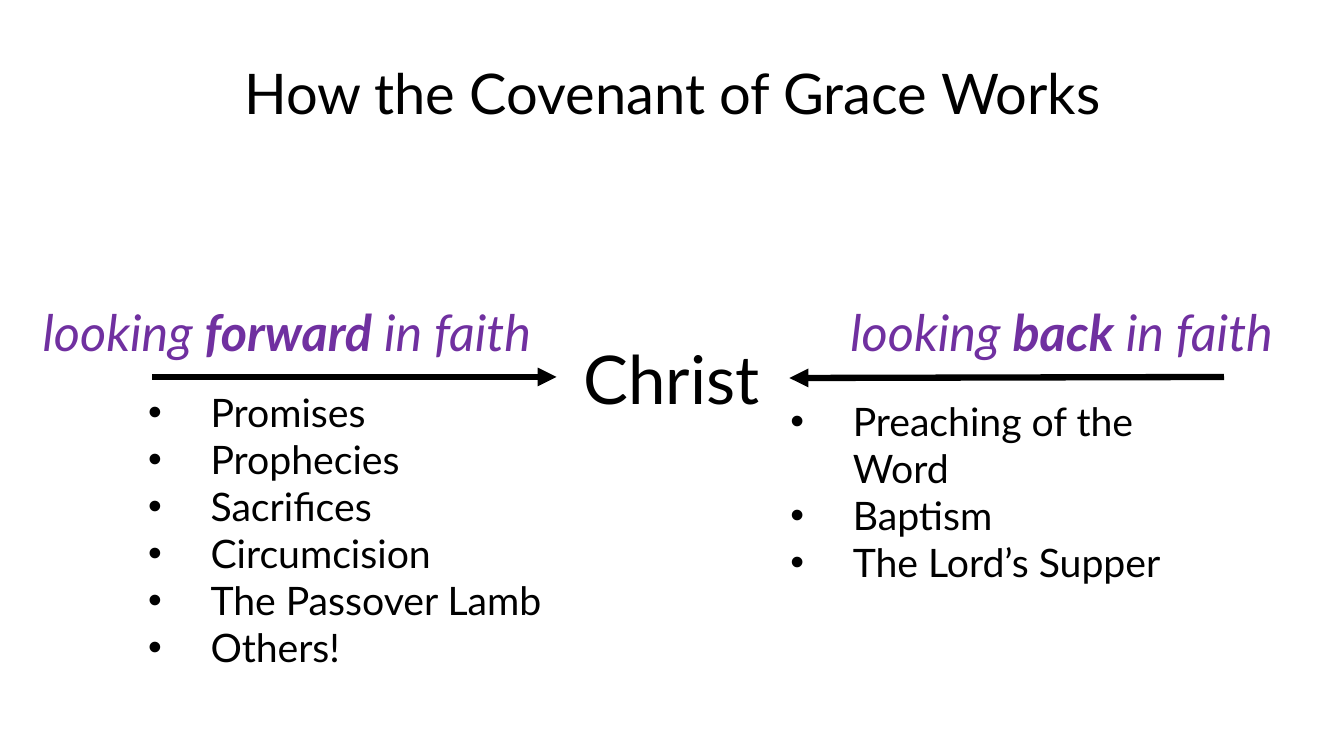
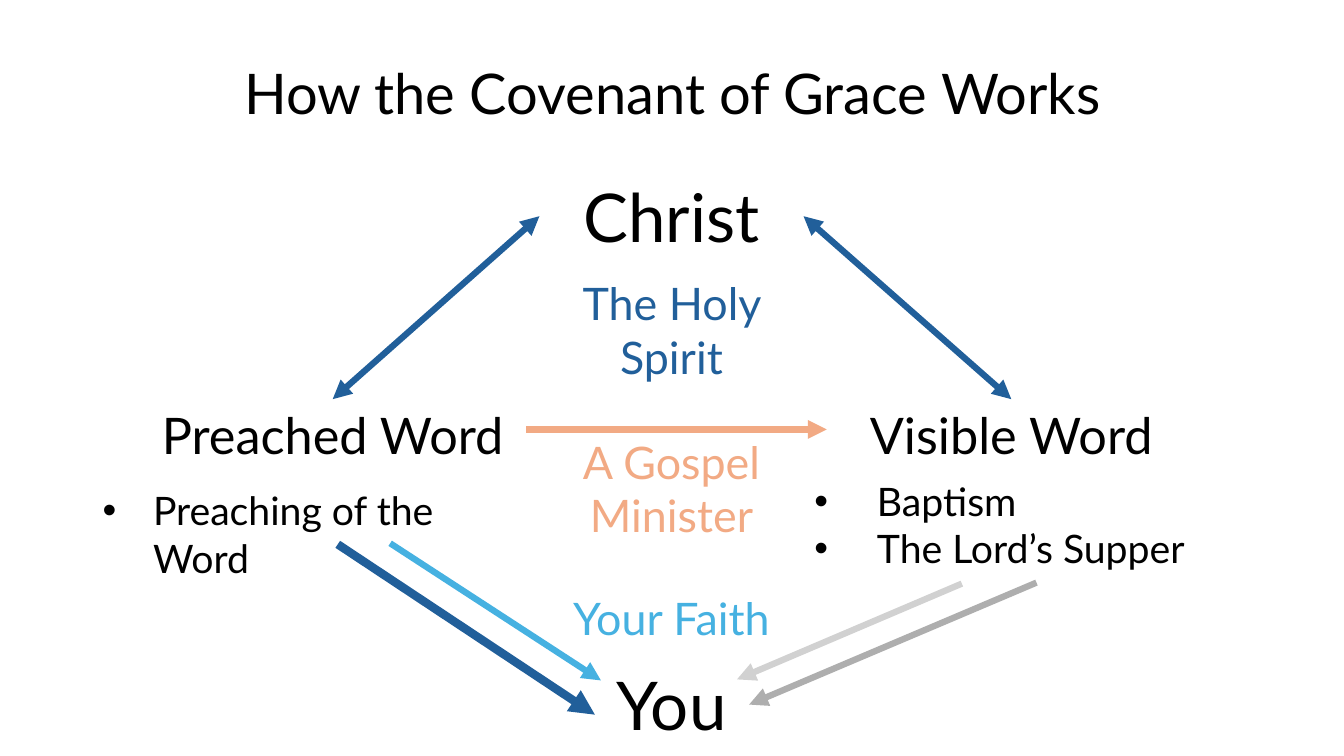
"""Build two slides on how the Covenant of Grace works."""
from lxml import etree
from pptx import Presentation
from pptx.dml.color import RGBColor
from pptx.enum import shapes, text
from pptx.oxml import ns
from pptx.util import Inches, Pt

FONT = "Lato"
TITLE = "How the Covenant of Grace Works"
COLORS = {
    "black": "000000", "purple": "7030A0", "navy": "215F9A", "sky": "46B1E1",
    "peach": "F2AA84", "gray": "AEAEAE", "silver": "D1D1D1",
}
CENTER_LEFT, CENTER_WIDTH = 5.35, 2.62
LABEL_WIDTH, LABEL_HEIGHT = 4.76, 0.71

DIRECTIONS = [
    ("forward", (0.09, 2.94, 5.51, LABEL_HEIGHT)),
    ("back", (8.15, 2.94, LABEL_WIDTH, LABEL_HEIGHT)),
]
OLD_SIGNS = ["Promises", "Prophecies", "Sacrifices", "Circumcision",
             "The Passover Lamb", "Others!"]
PREACHING = ["Preaching of the Word"]
SACRAMENTS = ["Baptism", "The Lord’s Supper"]
TIMELINE_ARROWS = [
    ((1.51, 3.74), (5.52, 3.74), "black", 4.5),
    ((12.14, 3.74), (7.83, 3.75), "black", 4.5),
]
MEANS = [
    ("The Holy Spirit", 2.69, 1.18, "navy"),
    ("A Gospel Minister", 4.26, 1.18, "peach"),
    ("Your Faith", 5.81, 0.64, "sky"),
]
MEANS_ARROWS = [
    ((5.22, 4.26), (8.2, 4.26), "peach", 4.5),
    ((3.35, 5.4), (5.9, 7.09), "navy", 6),
    ((10.28, 5.78), (7.43, 6.99), "gray", 4.5),
    ((3.87, 5.39), (5.96, 6.75), "sky", 4.5),
    ((9.54, 5.79), (7.31, 6.74), "silver", 4.5),
]


def add_paragraphs(slide, box, size, paragraphs, color="black"):
    """Add a text box; each paragraph is a list of (words, bold) runs."""
    label = slide.shapes.add_textbox(*map(Inches, box))
    frame = label.text_frame
    frame.word_wrap = True
    frame.auto_size = text.MSO_AUTO_SIZE.NONE
    for index, runs in enumerate(paragraphs):
        paragraph = frame.add_paragraph() if index else frame.paragraphs[0]
        paragraph.font.name = FONT
        paragraph.font.size = Pt(size)
        paragraph.font.color.rgb = RGBColor.from_string(COLORS[color])
        for words, bold in runs:
            run = paragraph.add_run()
            run.text = words
            if bold:
                run.font.bold = True
    return label


def add_label(slide, box, size, runs, color="black", italic=False):
    """Add one centred line of text."""
    label = add_paragraphs(slide, box, size, [runs], color)
    paragraph = label.text_frame.paragraphs[0]
    paragraph.alignment = text.PP_ALIGN.CENTER
    if italic:
        paragraph.font.italic = True
    return label


def add_bullets(slide, box, items, indent=0.62):
    """Add a bulleted list with a hanging indent."""
    listing = add_paragraphs(slide, box, 28, [[(item, False)] for item in items])
    for paragraph in listing.text_frame.paragraphs:
        properties = paragraph._p.get_or_add_pPr()
        properties.set("marL", str(Inches(indent)))
        properties.set("indent", str(-Inches(indent)))
        bullet_font = etree.Element(ns.qn("a:buFont"), typeface="Arial")
        bullet = etree.Element(ns.qn("a:buChar"), char="•")
        properties.insert(0, bullet_font)
        properties.insert(1, bullet)


def add_arrow(slide, start, end, color, width, double=False):
    """Add a straight arrow, with a second head at its start if double."""
    arrow = slide.shapes.add_connector(
        shapes.MSO_CONNECTOR.STRAIGHT, *map(Inches, (*start, *end)))
    arrow.line.color.rgb = RGBColor.from_string(COLORS[color])
    arrow.line.width = Pt(width)
    line = arrow.line._get_or_add_ln()
    for tip in (["headEnd"] if double else []) + ["tailEnd"]:
        etree.SubElement(line, ns.qn(f"a:{tip}"), type="triangle")
    etree.SubElement(arrow._element.spPr, ns.qn("a:effectLst"))
    return arrow


def add_center(slide, words, top, height, size=48, color="black"):
    """Add a label in the middle column."""
    box = (CENTER_LEFT, top, CENTER_WIDTH, height)
    return add_label(slide, box, size, [(words, False)], color)


def add_titled_slide(deck):
    """Add a blank slide with the shared title."""
    slide = deck.slides.add_slide(deck.slide_layouts[6])
    add_label(slide, (0.6, 0.53, 12.14, 0.77), 40, [(TITLE, False)])
    return slide


def build_timeline(deck):
    """Show faith looking forward and back to Christ."""
    slide = add_titled_slide(deck)
    add_center(slide, "Christ", 3.3, 0.91)
    for arrow in TIMELINE_ARROWS:
        add_arrow(slide, *arrow)
    add_bullets(slide, (1.37, 3.8, 4.23, 2.93), OLD_SIGNS)
    add_bullets(slide, (7.74, 3.89, 4.6, 1.51), PREACHING + SACRAMENTS)
    for direction, box in DIRECTIONS:
        runs = [("looking ", False), (direction, True), (" in faith", False)]
        add_label(slide, box, 36, runs, "purple", italic=True)


def build_means(deck):
    """Show how Christ reaches you through the Word."""
    slide = add_titled_slide(deck)
    christ = add_center(slide, "Christ", 1.69, 0.91)
    add_center(slide, "You", 6.53, 0.91)
    add_bullets(slide, (0.92, 4.78, 4.43, 0.88), PREACHING, indent=0.5)
    add_bullets(slide, (7.98, 4.69, 4.6, 1.04), SACRAMENTS)
    for words, left, christ_side in [("Preached Word", 0.92, 1),
                                     ("Visible Word", 7.65, 3)]:
        box = (left, 3.96, LABEL_WIDTH, LABEL_HEIGHT)
        word = add_label(slide, box, 36, [(words, False)])
        link = add_arrow(slide, (0, 0), (1, 1), "navy", 4.5, double=True)
        link.begin_connect(word, 0)
        link.end_connect(christ, christ_side)
    for words, top, height, color in MEANS:
        add_center(slide, words, top, height, 32, color)
    for arrow in MEANS_ARROWS:
        add_arrow(slide, *arrow)


def main():
    """Build and save the deck."""
    deck = Presentation()
    deck.slide_width, deck.slide_height = Inches(13.33), Inches(7.5)
    build_timeline(deck)
    build_means(deck)
    deck.save("out.pptx")


if __name__ == "__main__":
    main()
